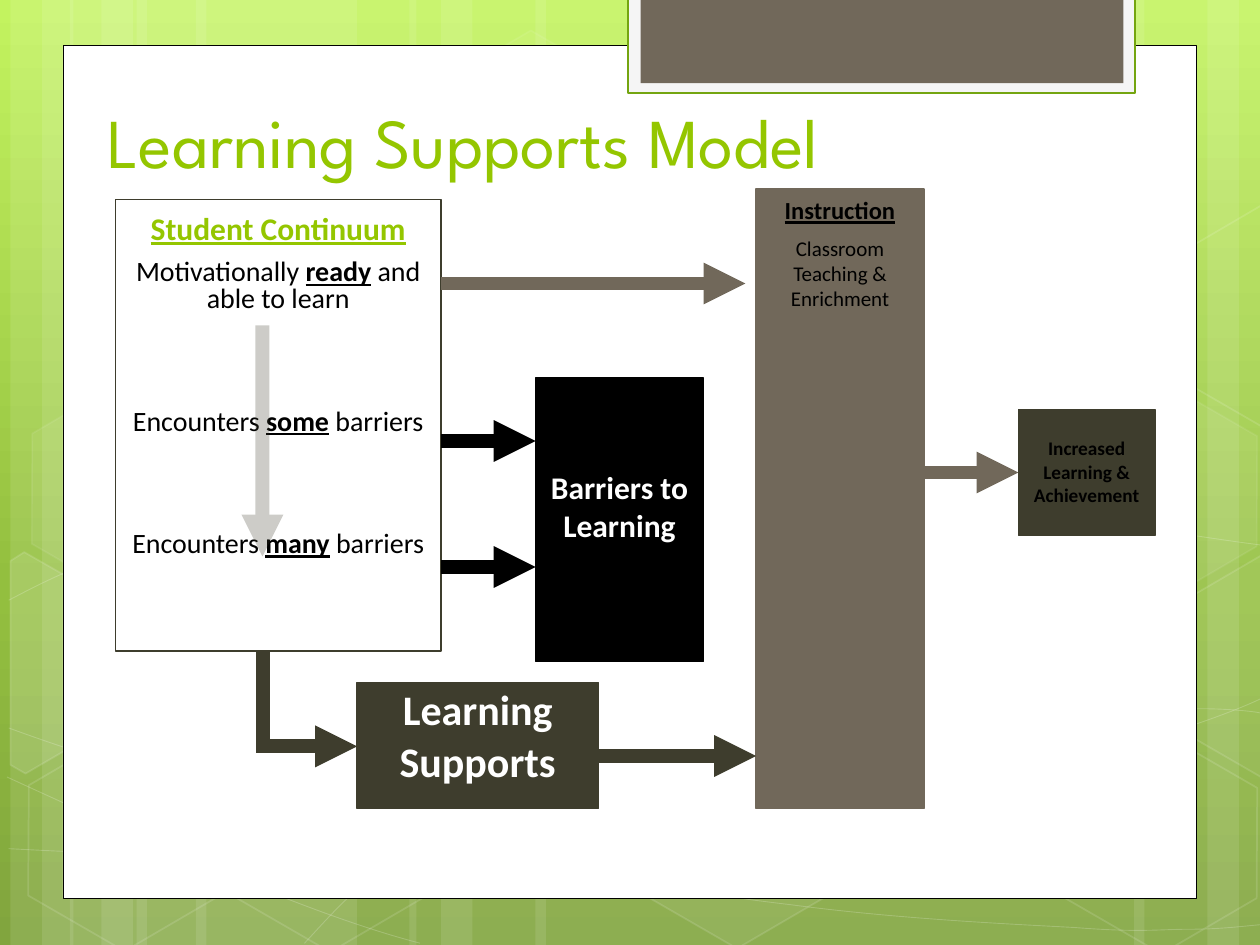
from math import cos, pi, sin

from lxml import etree
from pptx import Presentation
from pptx.dml.color import RGBColor
from pptx.enum.shapes import MSO_CONNECTOR, MSO_SHAPE
from pptx.enum.text import MSO_ANCHOR, PP_ALIGN
from pptx.oxml.ns import qn
from pptx.util import Pt

RECT, HEX = MSO_SHAPE.RECTANGLE, MSO_SHAPE.HEXAGON
LINE, ELBOW = MSO_CONNECTOR.STRAIGHT, MSO_CONNECTOR.ELBOW
LEFT, CENTER, BOTTOM = PP_ALIGN.LEFT, PP_ALIGN.CENTER, MSO_ANCHOR.BOTTOM


class Theme:
    sky = [(0, "C3F35F"), (62, "93BF3F"), (100, "81A53E")]
    white, black, pale = "FFFFFF", "000000", "F5F5F5"
    lime, leaf, taupe, dark = "94C600", "74A510", "71685A", "3E3D2D"
    body, head = "Calibri", "League Spartan"
    title, large, mid, text, lead, small, tiny = 40, 24, 18, 16, 14, 12, 11
    arrow = 8


def paint(shape, fill=None, edge=None, width=0.75, clear=100, faint=100):
    """Set fill and line; clear and faint are their opacities in percent."""
    shape.shadow.inherit = False
    props = shape._element.spPr
    for part, color, alpha in ((shape.fill, fill, clear), (shape.line.fill, edge, faint)):
        if color is None:
            part.background()
            continue
        part.solid()
        part.fore_color.rgb = RGBColor.from_string(color)
        if alpha < 100:
            home = props if part is shape.fill else props.find(qn("a:ln"))
            tint = home.find(qn("a:solidFill"))[0]
            etree.SubElement(tint, qn("a:alpha"), val=str(alpha * 1000))
    if edge:
        shape.line.width = Pt(width)


def trace(spots, close):
    """Draw an outline through points given in points."""
    first, *rest = [(Pt(x), Pt(y)) for x, y in spots]
    path = shapes.build_freeform(*first)
    path.add_line_segments(rest, close=close)
    return path.convert_to_shape()


deck = Presentation()
deck.slide_width, deck.slide_height = Pt(720), Pt(540)
slide = deck.slides.add_slide(deck.slide_layouts[5])
shapes = slide.shapes

# Background gradient
back = slide.background.fill
back.gradient()
back.gradient_angle = 270
stops = slide.background._cSld.find(".//" + qn("a:gsLst"))
for stop in list(stops):
    stops.remove(stop)
for place, color in Theme.sky:
    stop = etree.SubElement(stops, qn("a:gs"), pos=str(place * 1000))
    etree.SubElement(stop, qn("a:srgbClr"), val=color)

# Pale upright bands: left, width
bands = [(78, 126), (6, 36), (24, 60), (112, 126), (40, 36), (58, 60),
         (528, 126), (690, 36), (648, 60), (306, 222), (234, 36), (252, 60)]
for x, w in bands:
    paint(shapes.add_shape(RECT, Pt(x), 0, Pt(w), Pt(540)), Theme.white, clear=10)

# Thin curves: a start, then three points for each cubic piece
curves = [
    [(5, 485), (44, 487), (83, 489), (137, 488), (191, 487), (258, 486), (330, 479),
     (402, 472), (504, 458), (570, 444), (636, 431), (703, 409), (725, 397)],
    [(5, 343), (26, 332), (47, 321), (87, 310), (128, 300), (186, 284), (250, 279),
     (314, 274), (392, 273), (471, 279), (550, 284), (682, 307), (725, 312)],
    [(4, 444), (91, 484), (178, 523), (240, 539)],
    [(5, 416), (27, 424), (50, 432), (92, 444), (134, 454), (197, 472), (257, 485),
     (317, 497), (392, 510), (452, 517), (512, 525), (576, 528), (614, 530),
     (652, 533), (662, 531), (680, 531), (699, 531), (712, 529), (725, 528)],
    [(174, 539), (187, 525), (200, 510), (217, 498), (235, 485), (259, 470), (279, 460),
     (300, 450), (312, 446), (338, 438), (364, 431), (413, 421), (438, 416),
     (464, 411), (467, 411), (490, 410), (512, 407), (547, 405), (572, 405),
     (597, 404), (638, 405), (638, 405), (654, 405), (670, 405), (686, 405),
     (699, 405), (711, 406), (718, 407), (722, 408), (724, 407), (724, 408)],
]
for curve in curves:
    shape = trace(curve, False)
    paint(shape, None, Theme.white, 0.5, faint=20)
    path = shape._element.find(".//" + qn("a:path"))
    legs = path.findall(qn("a:lnTo"))
    for i in range(0, len(legs), 3):  # three points make one cubic piece
        cubic = etree.SubElement(path, qn("a:cubicBezTo"))
        for leg in legs[i:i + 3]:
            cubic.append(leg[0])
            path.remove(leg)

# Hexagons: left, top, fill opacity, line opacity
cells = [(240.5, 26, 4, 8), (358, 424, 6, 12), (8, 425.5, 0, 12), (10, 224.5, 7, 8),
         (125.5, 426, 0, 12), (542, 326, 10, 12), (600.5, 427, 0, 12), (600.5, 226, 7, 8)]
for x, y, clear, faint in cells:
    cell = shapes.add_shape(HEX, Pt(x), Pt(y), Pt(126), Pt(109.5))
    cell.adjustments[0] = 0.285
    cell.rotation = 30
    paint(cell, Theme.white if clear else None, Theme.white, 1, clear, faint)

# Hexagons cut by the slide edge: fill opacity, centre, corners as they appear
cuts = [
    (10, (26, 385), [(5.8, 320.4), (13.7, 315.4), (69, 347), (68.5, 410.4),
                     (14.4, 442), (5.8, 437)]),
    (4, (709, 374.5), [(666.7, 349), (720.7, 317.5), (726.5, 321), (726.5, 441.4),
                       (721.4, 444.2), (666.7, 412.6)]),
    (0, (709, 173.5), [(666.7, 149), (720.7, 117.4), (727, 121), (726.5, 241.2),
                       (721.4, 244), (666.7, 212.4)]),
]
c, s = cos(pi / 6), sin(pi / 6)
for clear, (mx, my), spots in cuts:
    flat = [(mx + (x - mx) * c + (y - my) * s, my - (x - mx) * s + (y - my) * c)
            for x, y in spots]
    cut = trace(flat, True)
    cut.rotation = 30
    paint(cut, Theme.white if clear else None, Theme.white, 1, clear, 12)

# Panel, tab and model boxes: left, top, width, height, fill, line, line width
boxes = {
    "panel": (36, 26, 648, 487.2, Theme.white, Theme.black, 0.5),
    "frame": (359, -1.5, 289.5, 54.5, Theme.pale, Theme.leaf, 1.25),
    "tab": (366, -1.5, 276, 49, Theme.taupe, None, 0),
    "teach": (432, 108, 96, 354, Theme.taupe, Theme.taupe, 0.75),
    "student": (66, 114, 186, 258, Theme.white, Theme.dark, 0.75),
    "result": (582, 234, 78, 72, Theme.dark, Theme.dark, 0.75),
    "barrier": (306, 216, 96, 162, Theme.black, Theme.black, 0.75),
    "support": (204, 390, 138, 72, Theme.dark, Theme.dark, 0.75),
}
made = {}
for name, (x, y, w, h, fill, edge, width) in boxes.items():
    made[name] = shapes.add_shape(RECT, Pt(x), Pt(y), Pt(w), Pt(h))
    paint(made[name], fill, edge, width)

# Labels: place, line spacing, rows of (text, size, colour, bold, underline, gap).
# Words between stars are bold and underlined.
labels = [
    ((66, 120, 186, 217), 0.8, [
        ("Student Continuum", Theme.mid, Theme.lime, True, True, 0),
        ("Motivationally *ready* and able to learn", Theme.text, Theme.black, False, False, 8),
        ("Encounters *some* barriers", Theme.text, Theme.black, False, False, 54.5),
        ("Encounters *many* barriers", Theme.text, Theme.black, False, False, 54.5)]),
    ((432, 108, 96, 75), 1, [
        ("Instruction", Theme.lead, Theme.black, True, True, 0),
        ("Classroom Teaching & Enrichment", Theme.small, Theme.black, False, False, 6)]),
    ((582, 246, 78, 48), 1, [
        ("Increased Learning & Achievement", Theme.tiny, Theme.black, True, False, 0)]),
    ((306, 264, 96, 51), 1, [
        ("Barriers to Learning", Theme.mid, Theme.white, True, False, 0)]),
    ((204, 397.5, 138, 58), 0.6, [
        ("Learning", Theme.large, Theme.white, True, False, 0),
        ("Supports", Theme.large, Theme.white, True, False, 12)]),
]
for place, pitch, rows in labels:
    frame = shapes.add_textbox(*map(Pt, place)).text_frame
    frame.word_wrap = True
    for i, (text, size, color, bold, under, gap) in enumerate(rows):
        para = frame.add_paragraph() if i else frame.paragraphs[0]
        para.alignment, para.line_spacing, para.space_before = CENTER, pitch, Pt(gap)
        for n, piece in enumerate(text.split("*")):
            run = para.add_run()
            run.text = piece
            font = run.font
            font.name, font.size = Theme.body, Pt(size)
            font.bold, font.underline = bold or n % 2 == 1, under or n % 2 == 1
            font.color.rgb = RGBColor.from_string(color)

# Arrows: kind, start, end, colour, opacity, box joined at its left side
arrows = [
    (LINE, (252, 162), (426, 162), Theme.taupe, 100, None),
    (LINE, (528, 270), (582, 270), Theme.taupe, 100, "result"),
    (LINE, (252, 252), (306, 252), Theme.black, 100, None),
    (LINE, (252, 324), (306, 324), Theme.black, 100, None),
    (LINE, (342, 432), (432, 432), Theme.dark, 100, None),
    (ELBOW, (150, 372.5), (204, 426.5), Theme.dark, 100, None),
    (LINE, (150, 186), (150, 318), Theme.dark, 25, None),
]
for kind, start, end, color, alpha, goal in arrows:
    arrow = shapes.add_connector(kind, *map(Pt, start + end))
    if goal:
        arrow.end_connect(made[goal], 1)
    arrow.line.width = Pt(Theme.arrow)
    arrow.line.color.rgb = RGBColor.from_string(color)
    props = arrow._element.spPr
    edge = props.find(qn("a:ln"))
    if alpha < 100:
        etree.SubElement(edge.find(qn("a:solidFill"))[0], qn("a:alpha"), val=str(alpha * 1000))
    etree.SubElement(edge, qn("a:miter"), lim="800000")
    etree.SubElement(edge, qn("a:tailEnd"), type="triangle")
    etree.SubElement(props, qn("a:effectLst"))
    if kind == ELBOW:  # one bend: down, then right
        props.find(qn("a:prstGeom")).set("prst", "bentConnector2")
        turn = props.find(qn("a:xfrm"))
        turn.set("rot", "16200000")
        turn.set("flipH", "1")

# Title, brought to the front
title = shapes.title
shapes._spTree.append(title._element)
title.left, title.top, title.width, title.height = map(Pt, (54, 30, 612, 78))
title.text_frame.text = "Learning Supports Model"
title.text_frame.vertical_anchor = BOTTOM
para = title.text_frame.paragraphs[0]
para.alignment = LEFT
font = para.runs[0].font
font.name, font.size = Theme.head, Pt(Theme.title)
font.color.rgb = RGBColor.from_string(Theme.lime)

deck.save("out.pptx")
